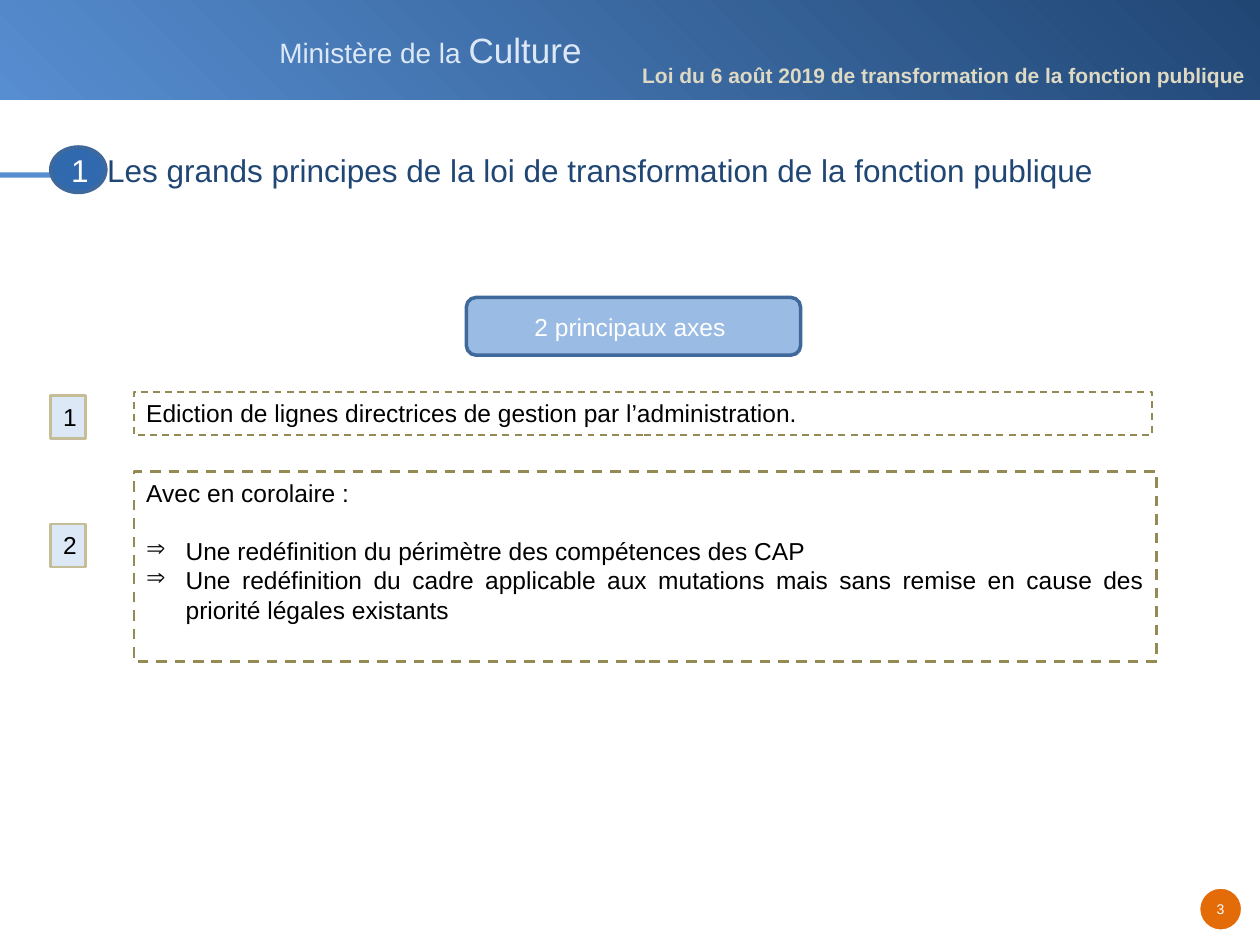
from pptx import Presentation
from pptx.dml.color import RGBColor
from pptx.enum import dml, shapes, text
from pptx.oxml import ns, xmlchemy
from pptx.util import Pt

NAVY = RGBColor(0x20, 0x46, 0x74)
SKY = RGBColor(0x57, 0x8E, 0xD1)
PALE = RGBColor(0xDD, 0xE8, 0xF6)
BLUE = RGBColor(0x30, 0x69, 0xAE)
STEEL = RGBColor(0x40, 0x69, 0x9B)
LIGHT = RGBColor(0x9A, 0xBB, 0xE3)
ORANGE = RGBColor(0xE3, 0x6C, 0x09)
SAND = RGBColor(0xDD, 0xD9, 0xC3)
TAN = RGBColor(0xC4, 0xBD, 0x97)
OLIVE = RGBColor(0x94, 0x8A, 0x54)
WHITE = RGBColor(0xFF, 0xFF, 0xFF)
BLACK = RGBColor(0, 0, 0)

KIND = shapes.MSO_SHAPE
ALIGN = text.PP_ALIGN
ANCHOR = text.MSO_ANCHOR


def style(par, size, color, align=ALIGN.LEFT, bold=False):
    par.alignment = align
    font = par.font
    font.name, font.size, font.bold = "Arial", Pt(size), bold
    font.color.rgb = color


def draw(slide, kind, box, fill=None, line=None, width=1, dash=False):
    shape = slide.shapes.add_shape(kind, *map(Pt, box))
    shape.shadow.inherit = False
    if fill is None:
        shape.fill.background()
    else:
        shape.fill.solid()
        shape.fill.fore_color.rgb = fill
    if line is None:
        shape.line.fill.background()
    else:
        shape.line.color.rgb = line
        shape.line.width = Pt(width)
    if dash:
        shape.line.dash_style = dml.MSO_LINE.DASH
    return shape


def write(shape, words, size, color, align, anchor=ANCHOR.MIDDLE):
    frame = shape.text_frame
    frame.word_wrap = True
    frame.vertical_anchor = anchor
    frame.text = words
    style(frame.paragraphs[0], size, color, align)
    return frame


def label(slide, box, inset=None):
    frame = slide.shapes.add_textbox(*map(Pt, box)).text_frame
    frame.word_wrap = False
    if inset is not None:
        frame.margin_left = frame.margin_right = Pt(inset)
        frame.margin_top = frame.margin_bottom = Pt(inset)
    return frame.paragraphs[0]


def bullet(par, indent):
    props = par._p.get_or_add_pPr()
    props.set("marL", str(Pt(indent)))
    props.set("indent", str(-Pt(indent)))
    mark = xmlchemy.OxmlElement("a:buChar")
    mark.set("char", "⇒")
    props.insert_element_before(mark, "a:tabLst", "a:defRPr", "a:extLst")


def header(slide, box):
    x, y, w, h = box
    # Gradient band, dark at the top right
    band = draw(slide, KIND.RECTANGLE, box, NAVY)
    band.fill.gradient()
    band.fill.gradient_angle = 225
    for stop, color in zip(band.fill.gradient_stops, (NAVY, SKY)):
        stop.color.rgb = color
    # Ministry name
    par = label(slide, (x + 152.5, y + 13, 189.5, 31.5))
    style(par, 16, PALE)
    par.add_run().text = "Ministère de la "
    big = par.add_run()
    big.text = "Culture"
    big.font.size = Pt(20)
    # Name of the law
    par = label(slide, (x + w - 353, y + h - 19, 349, 12), 0)
    par.text = "Loi du 6 août 2019 de transformation de la fonction publique"
    par.line_spacing = 0.85
    style(par, 12, SAND, bold=True)


def heading(slide, box):
    x, y, w, h = box
    # Lead-in bar
    draw(slide, KIND.RECTANGLE, (x, y + 22, 49, 3), SKY)
    # Title
    title = slide.shapes.title
    title.left, title.top, title.width, title.height = map(
        Pt, (x + 54, y, w - 54, h))
    frame = write(
        title,
        "Les grands principes de la loi de transformation de la fonction publique",
        18, NAVY, ALIGN.LEFT, ANCHOR.TOP)
    frame.auto_size = text.MSO_AUTO_SIZE.NONE
    frame.paragraphs[0].line_spacing = Pt(28)
    # Section number
    disc = draw(slide, KIND.OVAL, (x + 29, y + 7.5, 31.5, 26), BLUE, STEEL, 2)
    write(disc, "1", 18, WHITE, ALIGN.CENTER)


def axes(slide, box):
    x, y, w, h = box
    # Caption
    cap = draw(slide, KIND.ROUNDED_RECTANGLE, (x + 237.5, y, 191, 33),
               LIGHT, STEEL, 2)
    write(cap, "2 principaux axes ", 14, WHITE, ALIGN.CENTER)
    # Dashed boxes
    left = x + 47.5
    first = draw(slide, KIND.RECTANGLE, (left, y + 54, w - 50, 24.5),
                 None, OLIVE, 1, True)
    write(first, "Ediction de lignes directrices de gestion par l’administration. ",
          14, BLACK, ALIGN.JUSTIFY, ANCHOR.TOP)
    second = draw(slide, KIND.RECTANGLE, (left, y + 99.5, w - 47.5, h - 99.5),
                  None, OLIVE, 1.5, True)
    frame = write(second, "Avec en corolaire :", 14, BLACK,
                  ALIGN.JUSTIFY, ANCHOR.TOP)
    frame.paragraphs[0].space_after = Pt(16.5)
    for words in (
        "Une redéfinition du périmètre des compétences des CAP",
        "Une redéfinition du cadre applicable aux mutations mais sans remise "
        "en cause des priorité légales existants",
    ):
        par = frame.add_paragraph()
        par.text = words
        bullet(par, 22.5)
        style(par, 14, BLACK, ALIGN.JUSTIFY)
    # Numbers
    for num, top in (("1", 56), ("2", 129.5)):
        tag = draw(slide, KIND.RECTANGLE, (x, y + top, 20, 24.5),
                   PALE, TAN, 1.5)
        write(tag, num, 14, BLACK, ALIGN.JUSTIFY, ANCHOR.TOP)


def folio(slide, box):
    x, y, w, h = box
    draw(slide, KIND.OVAL, box, ORANGE, WHITE, 0.75)
    par = label(slide, (x + 1.25, y + 3.5, w - 2.5, 16.5), 3.6)
    par.text = "3"
    style(par, 8, WHITE, ALIGN.CENTER)


def main():
    deck = Presentation()
    deck.slide_width, deck.slide_height = Pt(720), Pt(540)
    slide = deck.slides.add_slide(deck.slide_layouts[5])
    header(slide, (0, 0, 720, 57))
    heading(slide, (0, 76.5, 707, 34))
    axes(slide, (29, 170, 632, 208))
    folio(slide, (685.5, 507.5, 24, 24))
    # The title is drawn above the band and bar but below the section number
    deck.save("out.pptx")


if __name__ == "__main__":
    main()
